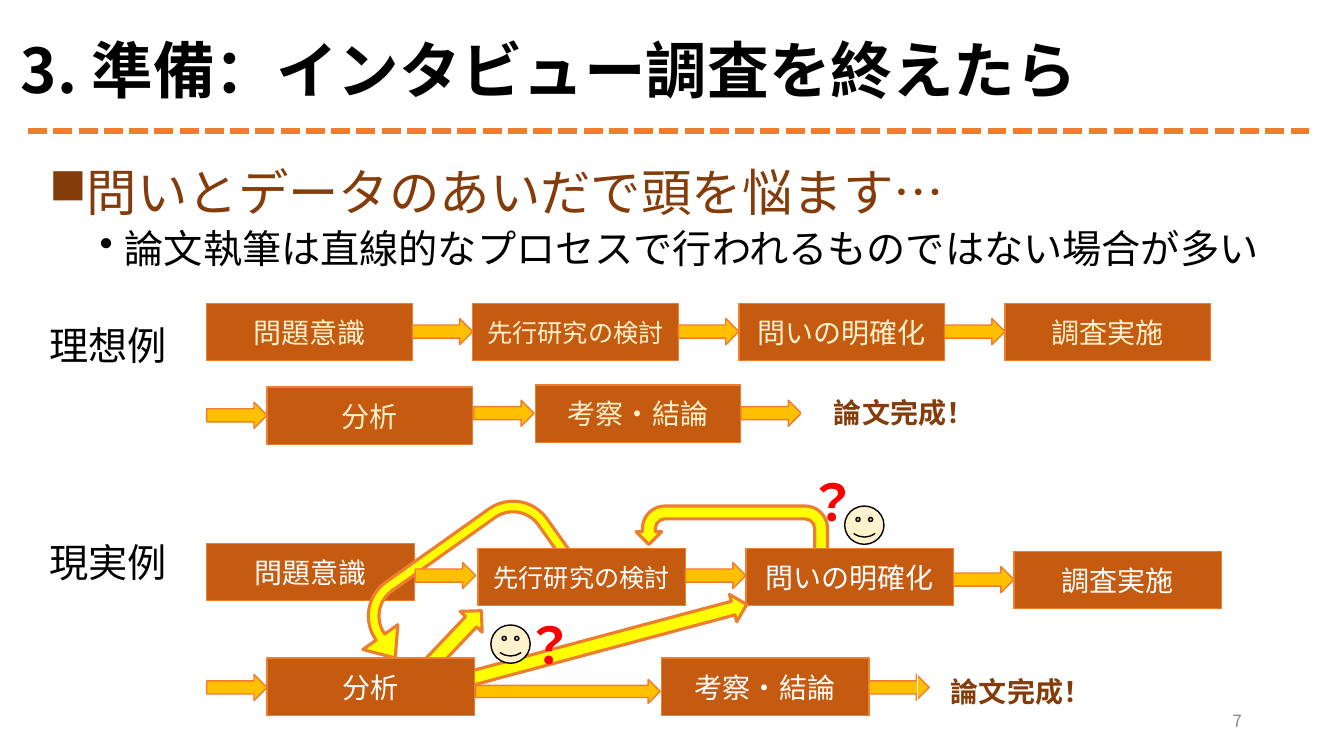
from pptx import Presentation
from pptx.dml.color import RGBColor
from pptx.enum.dml import MSO_LINE
from pptx.enum.shapes import MSO_CONNECTOR, MSO_SHAPE
from pptx.enum.text import MSO_ANCHOR, PP_ALIGN
from pptx.oxml.ns import qn
from pptx.util import Inches, Pt
from lxml import etree

RECT = MSO_SHAPE.RECTANGLE
ARROW = MSO_SHAPE.RIGHT_ARROW
UTURN = MSO_SHAPE.U_TURN_ARROW
SMILEY = MSO_SHAPE.SMILEY_FACE
STRAIGHT = MSO_CONNECTOR.STRAIGHT
DASH = MSO_LINE.SQUARE_DOT
TOP, MIDDLE = MSO_ANCHOR.TOP, MSO_ANCHOR.MIDDLE
LEFT, CENTER, RIGHT = PP_ALIGN.LEFT, PP_ALIGN.CENTER, PP_ALIGN.RIGHT

FONT = "Noto Sans CJK JP"
COLS, ROWS = 40, 30
C = {
    "black": "000000", "white": "FFFFFF", "brown": "843C0B", "rust": "C55A11",
    "orange": "ED7D31", "gold": "FFC000", "yellow": "FFFF00",
    "cream": "FFF2CC", "red": "FF0000", "grey": "8C8C8C",
}


def rgb(name):
    return RGBColor.from_string(C[name])


def write(p, text, size=20, color="black", bold=False, align=LEFT,
          spacing=None, before=0, bullet=None, indent=0):
    p.alignment = align
    p.space_before = Pt(before)
    if spacing:
        p.line_spacing = spacing
    if bullet:
        pPr = p._p.get_or_add_pPr()
        pPr.set("marL", str(Inches(indent)))
        pPr.set("indent", str(Inches(-0.25)))
        etree.SubElement(pPr, qn("a:buChar")).set("char", bullet)
    r = p.add_run()
    r.text = text
    r.font.size = Pt(size)
    r.font.bold = bold
    r.font.name = FONT
    r.font.color.rgb = rgb(color)
    etree.SubElement(r._r.get_or_add_rPr(), qn("a:ea")).set("typeface", FONT)


class Deck:
    def __init__(self):
        self.prs = Presentation()
        self.prs.slide_width = Inches(13.33)
        self.prs.slide_height = Inches(7.5)
        self.s = self.prs.slides.add_slide(self.prs.slide_layouts[6])

    def x(self, cols):
        return round(self.prs.slide_width * cols / COLS)

    def y(self, rows):
        return round(self.prs.slide_height * rows / ROWS)

    def area(self, x, y, w, h):
        return self.x(x), self.y(y), self.x(w), self.y(h)

    def text(self, x, y, w, h, paragraphs, anchor=TOP):
        tf = self.s.shapes.add_textbox(*self.area(x, y, w, h)).text_frame
        tf.word_wrap = True
        tf.vertical_anchor = anchor
        for i, (text, fmt) in enumerate(paragraphs):
            write(tf.add_paragraph() if i else tf.paragraphs[0], text, **fmt)

    def shape(self, kind, x, y, w, h, fill=None, line="orange", width=1,
              rotation=0, flip=None, adjust=()):
        sp = self.s.shapes.add_shape(kind, *self.area(x, y, w, h))
        sp.shadow.inherit = False
        if fill:
            sp.fill.solid()
            sp.fill.fore_color.rgb = rgb(fill)
        else:
            sp.fill.background()
        sp.line.color.rgb = rgb(line)
        sp.line.width = Pt(width)
        sp.rotation = rotation
        if flip:
            sp._element.spPr.find(qn("a:xfrm")).set(flip, "1")
        for i, value in enumerate(adjust):
            sp.adjustments[i] = value
        return sp

    def box(self, x, y, w, text, fill="rust", line="orange", **fmt):
        tf = self.shape(RECT, x, y, w, 2.28, fill, line).text_frame
        tf.word_wrap = True
        tf.vertical_anchor = MIDDLE
        write(tf.paragraphs[0], text, align=CENTER, **fmt)

    def done(self, x, y, w):
        self.box(x, y, w, "論文完成！", None, "white", color="brown", bold=True)

    def arrow(self, x, y, w=1.8, h=1.04):
        self.shape(ARROW, x, y, w, h, "gold")

    def detour(self, kind, x, y, w, h, **style):
        self.shape(kind, x, y, w, h, "yellow", width=2.25, **style)

    def puzzled(self, mark_x, mark_y, face_x, face_y):
        self.text(mark_x, mark_y, 2.91, 2.84,
                  [("？", dict(size=36, color="red", bold=True))])
        self.shape(SMILEY, face_x, face_y, 1.17, 1.52, "cream", "black")

    def rule(self, x1, x2, y):
        cx = self.s.shapes.add_connector(
            STRAIGHT, self.x(x1), self.y(y), self.x(x2), self.y(y))
        cx.line.color.rgb = rgb("orange")
        cx.line.width = Pt(4.5)
        cx.line.dash_style = DASH
        etree.SubElement(cx._element.spPr, qn("a:effectLst"))


def headings(d):
    d.text(0.33, 0, 34.5, 5.8,
           [("3. 準備：インタビュー調査を終えたら",
             dict(size=44, bold=True, spacing=0.9))], MIDDLE)
    label = dict(size=28, spacing=0.9)
    d.text(1.17, 6.48, 38.31, 22.28, [
        ("問いとデータのあいだで頭を悩ます…",
         dict(size=36, color="brown", spacing=0.9, bullet="■", indent=0.25)),
        ("論文執筆は直線的なプロセスで行われるものではない場合が多い",
         dict(label, before=5, bullet="•", indent=0.75)),
        ("理想例", dict(label, before=39)),
        ("現実例", dict(label, before=124.5)),
    ])
    d.text(28.26, 27.8, 9, 1.6,
           [("7", dict(size=12, color="grey", align=RIGHT))], MIDDLE)
    d.rule(0.84, 39.15, 5.2)


def ideal_flow(d, steps):
    w, pitch = 6.12, 7.92
    for i, (text, size) in enumerate(steps):
        x = 6.15 + i * pitch
        d.box(x, 12.04, w, text, size=size, color="cream")
        if i < len(steps) - 1:
            d.arrow(x + w, 12.64)
    for x, y in ((6.15, 15.96), (14.1, 15.88), (22.05, 15.88)):
        d.arrow(x, y)
    d.box(7.95, 15.36, w, "分析", color="cream")
    d.box(15.93, 15.28, w, "考察・結論", color="cream")
    d.done(23.85, 15.24, w)


def real_flow(d, steps):
    w = 6.18
    places = ((6.15, 21.56), (14.22, 21.76), (22.2, 21.76), (30.18, 21.88))
    boxes = [(x, y, w, text, size)
             for (x, y), (text, size) in zip(places, steps)]
    for i, (x, y, w, text, size) in enumerate(boxes):
        d.box(x, y, w, text, size=size, color="white")
        if i == 0:
            d.detour(UTURN, 18.93, 20.08, 5.7, 2.04, flip="flipH")
            d.detour(UTURN, 10.2, 21.52, 6.72, 3.4, rotation=324.6,
                     flip="flipH", adjust=(0.124, 0.25, 0.3, 0.485, 0.786))
    for x, y in ((12.36, 22.32), (20.4, 22.32), (28.38, 22.48), (6.15, 26.76)):
        d.arrow(x, y)
    d.puzzled(23.73, 18.48, 25.14, 20.08)
    d.detour(ARROW, 12.51, 24.68, 2.16, 1.2, rotation=313.4)
    d.detour(ARROW, 13.26, 25, 9.12, 1.12, rotation=345, flip="flipV")
    d.box(7.95, 26.12, w, "分析", color="white")
    d.puzzled(15.3, 24.16, 14.61, 24.8)
    d.arrow(14.16, 26.96, 5.49, 0.96)
    d.box(19.68, 26.12, w, "考察・結論", color="white")
    d.arrow(25.86, 26.76)
    d.done(27.3, 26.28, w)


def main():
    steps = [("問題意識", 20), ("先行研究の検討", 18),
             ("問いの明確化", 20), ("調査実施", 20)]
    d = Deck()
    headings(d)
    ideal_flow(d, steps)
    real_flow(d, steps)
    d.prs.save("out.pptx")


if __name__ == "__main__":
    main()
